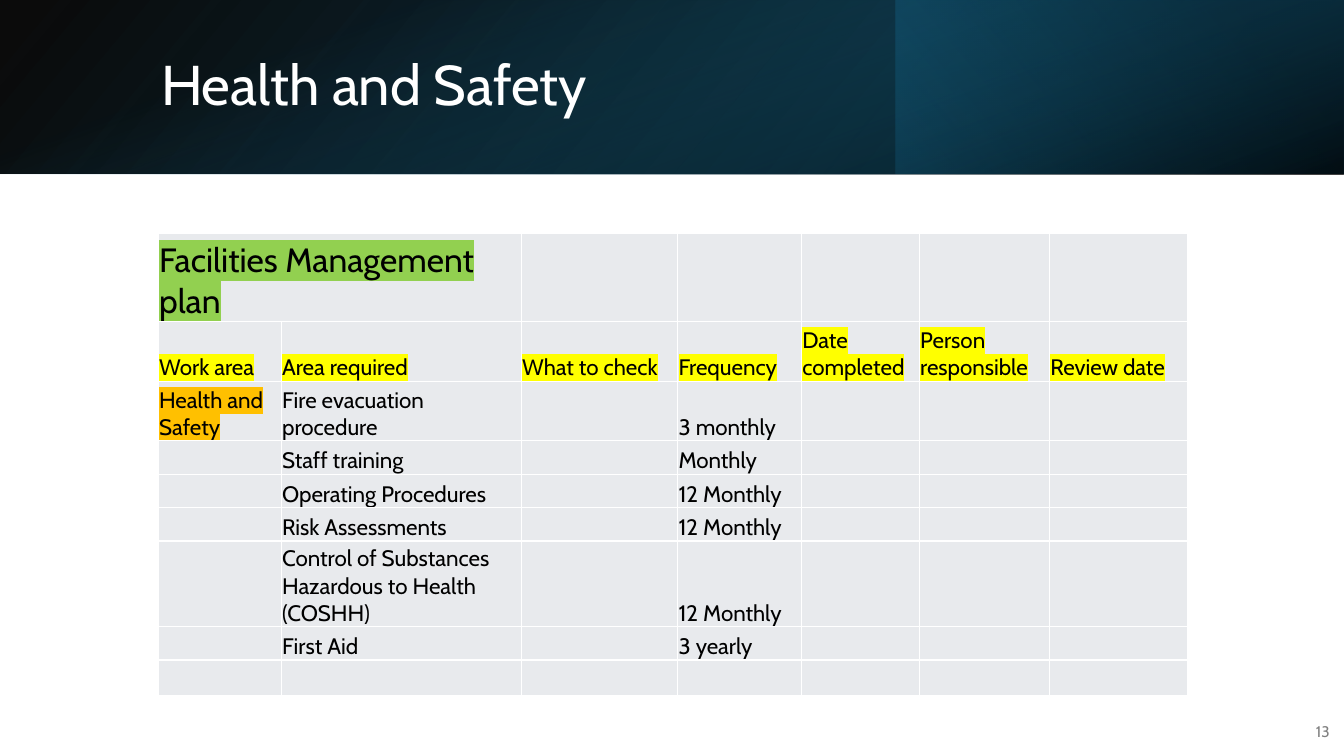
from lxml import etree
from pptx import Presentation
from pptx.dml.color import RGBColor
from pptx.enum import shapes, text
from pptx.oxml import ns
from pptx.util import Cm, Pt

FONT = "Cabin"
BLACK, WHITE, GREY = "000000", "FFFFFF", "808080"
GREEN, YELLOW, ORANGE, CELL = "92D050", "FFFF00", "FFC000", "E8EAED"
COLS = [3.1, 6.05, 3.94, 3.12, 2.97, 3.28, 3.48]
ROWS = [2.24, 1.5, 1.5, 0.84, 0.84, 0.84, 2.16, 0.84, 0.91]
HEADERS = ["Work area", "Area required", "What to check", "Frequency",
           "Date completed", "Person responsible", "Review date"]
CHECKS = [
    ("Fire evacuation procedure", "3 monthly"),
    ("Staff training", "Monthly"),
    ("Operating Procedures", "12 Monthly"),
    ("Risk Assessments", "12 Monthly"),
    ("Control of Substances Hazardous to Health (COSHH)", "12 Monthly"),
    ("First Aid", "3 yearly"),
]


def rgb(value):
    """Turn a hex string into a colour."""
    return RGBColor.from_string(value)


def add_child(parent, tag, **attrs):
    """Append a DrawingML element to a parent."""
    return etree.SubElement(parent, ns.qn(f"a:{tag}"), attrs)


def add_gradient(slide, box, stops, angle, rotation=0, flip=False):
    """Add a rectangle with a two-stop gradient and a clockwise angle."""
    sp = slide.shapes.add_shape(shapes.MSO_SHAPE.RECTANGLE, *map(Cm, box))
    sp.shadow.inherit = False
    sp.line.fill.background()
    sp.rotation = rotation
    if flip:
        sp._element.spPr.xfrm.set("flipH", "1")
    sp.fill.gradient()
    sp.fill.gradient_angle = 360 - angle
    for stop, (position, color, alpha) in zip(sp.fill.gradient_stops, stops):
        stop.position = position / 100
        stop.color.rgb = rgb(color)
    for clr, (_, _, alpha) in zip(sp._element.spPr.iter(ns.qn("a:srgbClr")), stops):
        add_child(clr, "alpha", val=str(alpha * 1000))


def style(p, size, color):
    """Set the font of a paragraph."""
    p.font.name, p.font.size = FONT, Pt(size)
    p.font.color.rgb = rgb(color)


def add_text(slide, box, content, size, color, align=text.PP_ALIGN.LEFT):
    """Add a vertically centred text box and return its paragraph."""
    tf = slide.shapes.add_textbox(*map(Cm, box)).text_frame
    tf.word_wrap = True
    tf.vertical_anchor = text.MSO_ANCHOR.MIDDLE
    p = tf.paragraphs[0]
    p.text, p.alignment = content, align
    style(p, size, color)
    return p


def add_borders(cell):
    """Draw thin white borders round a cell."""
    tc_pr = cell._tc.get_or_add_tcPr()
    for i, side in enumerate(("lnL", "lnR", "lnT", "lnB")):
        ln = add_child(tc_pr, side, w=str(Pt(1)))
        add_child(add_child(ln, "solidFill"), "srgbClr", val=WHITE)
        tc_pr.insert(i, ln)


def fill_cell(cell, content, size=16, highlight=None):
    """Write bottom-aligned text, highlighted if a colour is given."""
    p = cell.text_frame.paragraphs[0]
    style(p, size, BLACK)
    if content:
        r = p.add_run()
        r.text = content
        if highlight:
            mark = add_child(r._r.get_or_add_rPr(), "highlight")
            add_child(mark, "srgbClr", val=highlight)


def add_plan(slide):
    """Add the facilities management table."""
    table = slide.shapes.add_table(
        len(ROWS), len(COLS), Cm(3.99), Cm(5.87), Cm(sum(COLS)), Cm(sum(ROWS))).table
    table.first_row = table.horz_banding = False
    for column, width in zip(table.columns, COLS):
        column.width = Cm(width)
    for row, height in zip(table.rows, ROWS):
        row.height = Cm(height)
    for cell in table.iter_cells():
        cell.margin_left = cell.margin_right = cell.margin_top = Cm(0.02)
        cell.margin_bottom = 0
        cell.vertical_anchor = text.MSO_ANCHOR.BOTTOM
        cell.fill.solid()
        cell.fill.fore_color.rgb = rgb(CELL)
        add_borders(cell)
    table.cell(0, 0).merge(table.cell(0, 1))
    fill_cell(table.cell(0, 0), "Facilities Management plan", 24, GREEN)
    for col, header in enumerate(HEADERS):
        fill_cell(table.cell(1, col), header, highlight=YELLOW)
    fill_cell(table.cell(2, 0), "Health and Safety", highlight=ORANGE)
    for row, (area, frequency) in enumerate(CHECKS, 2):
        fill_cell(table.cell(row, 1), area)
        fill_cell(table.cell(row, 3), frequency)


def main():
    """Build and save the slide."""
    prs = Presentation()
    prs.slide_width, prs.slide_height = Cm(33.87), Cm(19.05)
    slide = prs.slides.add_slide(prs.slide_layouts[6])
    add_gradient(slide, (0, 0, 33.87, 4.38),
                 [(0, BLACK, 96), (100, "104862", 100)], 140, flip=True)
    add_gradient(slide, (22.58, 0, 11.29, 4.38),
                 [(19, "0B3041", 68), (100, "156082", 79)], 320, rotation=180)
    add_gradient(slide, (14.74, -14.74, 4.38, 33.87),
                 [(23, "156082", 0), (99, BLACK, 74)], 340, rotation=90)
    title = add_text(slide, (3.81, 0.97, 27.89, 2.44), "Health and Safety", 40, WHITE)
    title.line_spacing = 0.9
    number = add_text(slide, (32.51, 17.93, 1.25, 1.02), "13", 11, GREY,
                      text.PP_ALIGN.RIGHT)
    number.space_after = Pt(6)
    add_plan(slide)
    prs.save("out.pptx")


if __name__ == "__main__":
    main()
